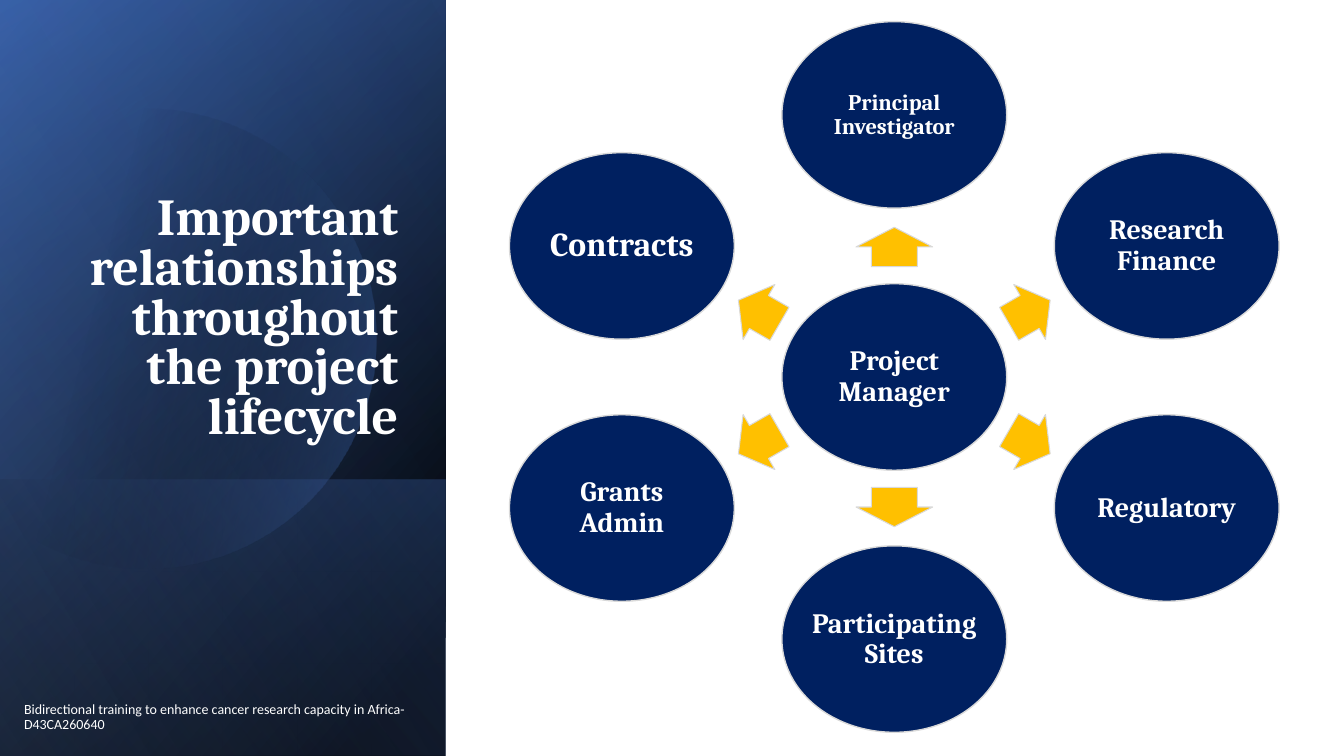
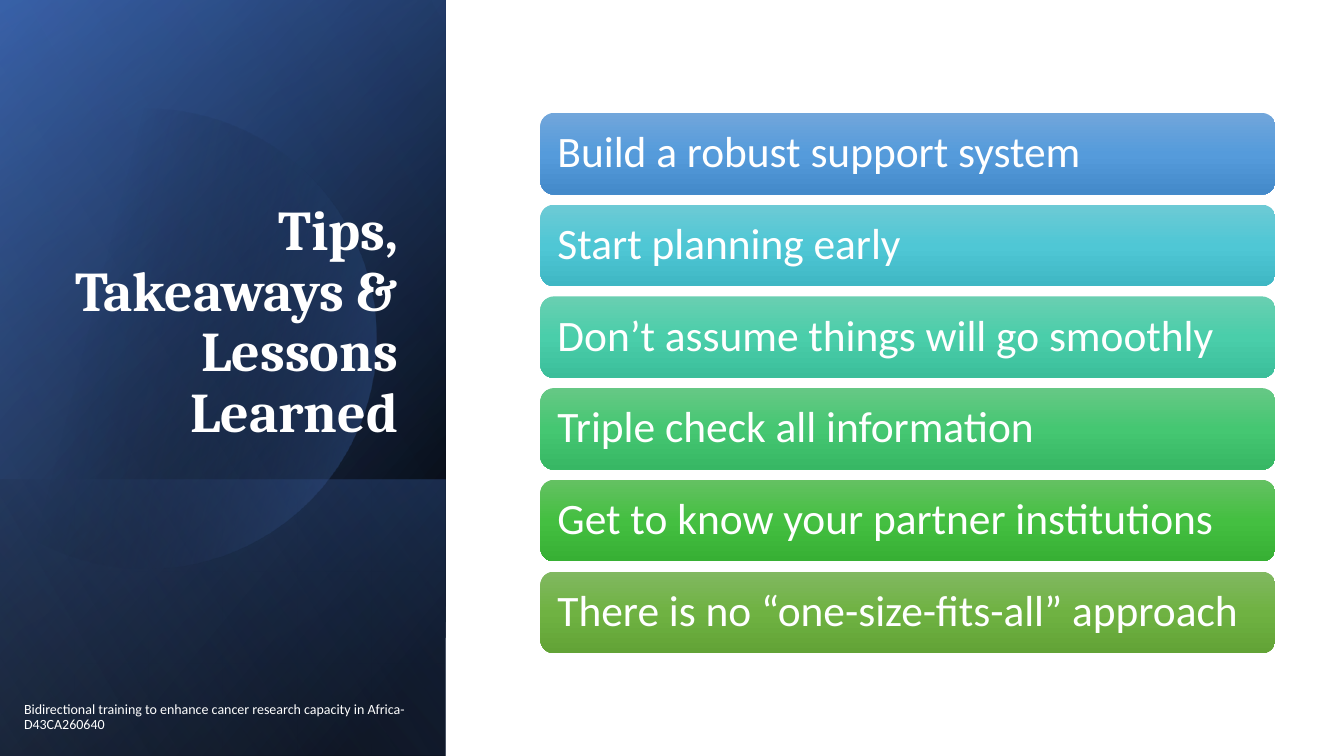
import math

from lxml import etree
from pptx import Presentation
from pptx.dml.color import RGBColor
from pptx.enum import shapes, text
from pptx.oxml.ns import qn
from pptx.util import Inches, Pt

WHITE = RGBColor(0xFF, 0xFF, 0xFF)
BLACK = RGBColor(0x00, 0x00, 0x00)
BLUE = RGBColor(0x44, 0x72, 0xC4)
DEEP_BLUE = RGBColor(0x2F, 0x55, 0x97)
PALE_BLUE = RGBColor(0x8F, 0xAA, 0xDC)
NAVY = RGBColor(0x00, 0x20, 0x60)
GOLD = RGBColor(0xFF, 0xC0, 0x00)
GREY = RGBColor(0xD9, 0xD9, 0xD9)

HEADING, BODY = "Cambria", "Calibri"
WIDTH, HEIGHT = 13.33, 7.5
PANEL_W = 4.42
SHADE_TOP = 4.76
DISC_X, DISC_Y, DISC_R = 1.45, 3.36, 2.28
HUB_X, HUB_Y = 8.87, 3.74
NODE_W, NODE_H = 2.23, 1.85
BAR_X, BAR_Y, BAR_W, BAR_H, BAR_PITCH = 5.36, 1.12, 7.29, 0.81, 0.91

FOOTER = ("Bidirectional training to enhance cancer research capacity "
          "in Africa-D43CA260640")

# Clockwise from the top: label and text size
PARTNERS = [
    ("Principal\vInvestigator", 16),
    ("Research\vFinance", 20),
    ("Regulatory", 20),
    ("Participating\vSites", 20),
    ("Grants\vAdmin", 20),
    ("Contracts", 24),
]

# Label and the top, middle and bottom colours of its bar
TIPS = [
    ("Build a robust support system", "71A6DB", "559BDB", "448ACA"),
    ("Start planning early", "6DCAD5", "4FC7D5", "3FB7C4"),
    ("Don’t assume things will go smoothly", "69CFB1", "4ACEAA", "3BBE9A"),
    ("Triple check all information", "66C885", "45C772", "37B764"),
    ("Get to know your partner institutions", "64C162", "44BF41", "37B034"),
    ("There is no “one-size-fits-all” approach", "81B861", "6FB242", "62A336"),
]


def fill_gradient(sp, angle, *stops):
    """Fill with (position %, colour, opacity %) stops, angle clockwise."""
    sp.shadow.inherit = False
    sp.line.fill.background()
    sp.fill.gradient()
    grad = sp.fill._xPr.find(qn("a:gradFill"))
    grad.find(qn("a:lin")).set("ang", str(angle * 60000))
    gs_lst = grad.find(qn("a:gsLst"))
    for gs in list(gs_lst):
        gs_lst.remove(gs)
    for pos, color, opacity in stops:
        gs = etree.SubElement(gs_lst, qn("a:gs"), pos=str(pos * 1000))
        clr = etree.SubElement(gs, qn("a:srgbClr"), val=str(color))
        if opacity < 100:
            etree.SubElement(clr, qn("a:alpha"), val=str(opacity * 1000))


def add_shape(s, kind, x, y, w, h):
    sp = s.shapes.add_shape(kind, Inches(x), Inches(y), Inches(w), Inches(h))
    sp.shadow.inherit = False
    return sp


def add_centred(s, kind, cx, cy, w, h, color, line_width):
    sp = add_shape(s, kind, cx - w / 2, cy - h / 2, w, h)
    sp.fill.solid()
    sp.fill.fore_color.rgb = color
    sp.line.color.rgb = GREY
    sp.line.width = Pt(line_width)
    return sp


def write(sp, content, size, font=BODY, bold=False, align=text.PP_ALIGN.LEFT,
          anchor=text.MSO_ANCHOR.MIDDLE, spacing=0.9, wrap=True):
    tf = sp.text_frame
    tf.text = content
    tf.word_wrap = wrap
    tf.auto_size = text.MSO_AUTO_SIZE.NONE
    tf.vertical_anchor = anchor
    p = tf.paragraphs[0]
    p.alignment = align
    p.line_spacing = spacing
    p.font.name = font
    p.font.size = Pt(size)
    p.font.bold = bold
    p.font.color.rgb = WHITE
    return tf


def add_disc(s):
    """Draw the faint disc that the slide's left edge cuts off."""
    reach = math.acos(-DISC_X / DISC_R)
    steps = 90
    angles = [reach * (2 * i / steps - 1) for i in range(steps + 1)]
    points = [(Inches(DISC_X + DISC_R * math.cos(a)),
               Inches(DISC_Y + DISC_R * math.sin(a))) for a in angles]
    builder = s.shapes.build_freeform(*points[0])
    builder.add_line_segments(points[1:], close=True)
    fill_gradient(builder.convert_to_shape(), 14,
                  (29, BLACK, 0), (100, BLUE, 43))


def add_panel(s):
    def layer(top, angle, *stops):
        sp = add_shape(s, shapes.MSO_SHAPE.RECTANGLE,
                       0, top, PANEL_W, HEIGHT - top)
        fill_gradient(sp, angle, *stops)

    layer(0, 220, (8, BLACK, 100), (100, DEEP_BLUE, 100))
    layer(0, 240, (0, BLACK, 0), (99, BLUE, 46))
    layer(SHADE_TOP, 140, (2, BLUE, 29), (100, BLACK, 30))
    add_disc(s)
    layer(0, 150, (0, BLACK, 0), (99, PALE_BLUE, 11))


def add_panel_slide(prs, title, size, spacing):
    """Add a slide with the dark panel, its title and its footer."""
    s = prs.slides.add_slide(prs.slide_layouts[5])
    add_panel(s)
    sp = s.shapes.title
    sp.left, sp.top, sp.width, sp.height = map(
        Inches, (0.64, 1.84, 3.41, 2.62))
    s.shapes._spTree.append(sp._element)  # in front of the panel
    write(sp, title, size, HEADING, True, text.PP_ALIGN.RIGHT,
          text.MSO_ANCHOR.BOTTOM, spacing)
    footer = s.shapes.add_textbox(*map(Inches, (0.14, 6.9, 4.57, 0.43)))
    write(footer, FOOTER, 10)
    return s


def add_node(s, cx, cy, label, size):
    sp = add_centred(s, shapes.MSO_SHAPE.OVAL, cx, cy, NODE_W, NODE_H, NAVY, 1)
    write(sp, label, size, HEADING, True, text.PP_ALIGN.CENTER, wrap=False)


def add_hub(s):
    """Draw the hub with its partners and arrows, 60 degrees apart."""
    add_node(s, HUB_X, HUB_Y, "Project\vManager", 20)
    for i, (label, size) in enumerate(PARTNERS):
        degrees = 60 * i - 90
        dx = math.cos(math.radians(degrees))
        dy = math.sin(math.radians(degrees))
        length, breadth = (0.39, 0.76) if i % 3 == 0 else (0.47, 0.63)
        arrow = add_centred(s, shapes.MSO_SHAPE.RIGHT_ARROW,
                            HUB_X + 1.55 * dx, HUB_Y + 1.29 * dy,
                            length, breadth, GOLD, 0.75)
        arrow.adjustments[0] = 0.6
        arrow.adjustments[1] = 0.5
        arrow.rotation = degrees
        add_node(s, HUB_X + 3.12 * dx, HUB_Y + 2.6 * dy, label, size)


def add_bars(s):
    for i, (label, top, middle, bottom) in enumerate(TIPS):
        sp = add_shape(s, shapes.MSO_SHAPE.ROUNDED_RECTANGLE,
                       BAR_X, BAR_Y + i * BAR_PITCH, BAR_W, BAR_H)
        fill_gradient(sp, 90, (0, top, 100), (50, middle, 100),
                      (100, bottom, 100))
        tf = write(sp, label, 31)
        tf.margin_left = tf.margin_right = Inches(0.13)


def main():
    prs = Presentation()
    prs.slide_width, prs.slide_height = Inches(WIDTH), Inches(HEIGHT)
    add_hub(add_panel_slide(
        prs, "Important relationships throughout the project lifecycle",
        37, 0.8))
    add_bars(add_panel_slide(
        prs, "Tips, Takeaways & Lessons Learned", 40, 0.9))
    prs.save("out.pptx")


if __name__ == "__main__":
    main()
